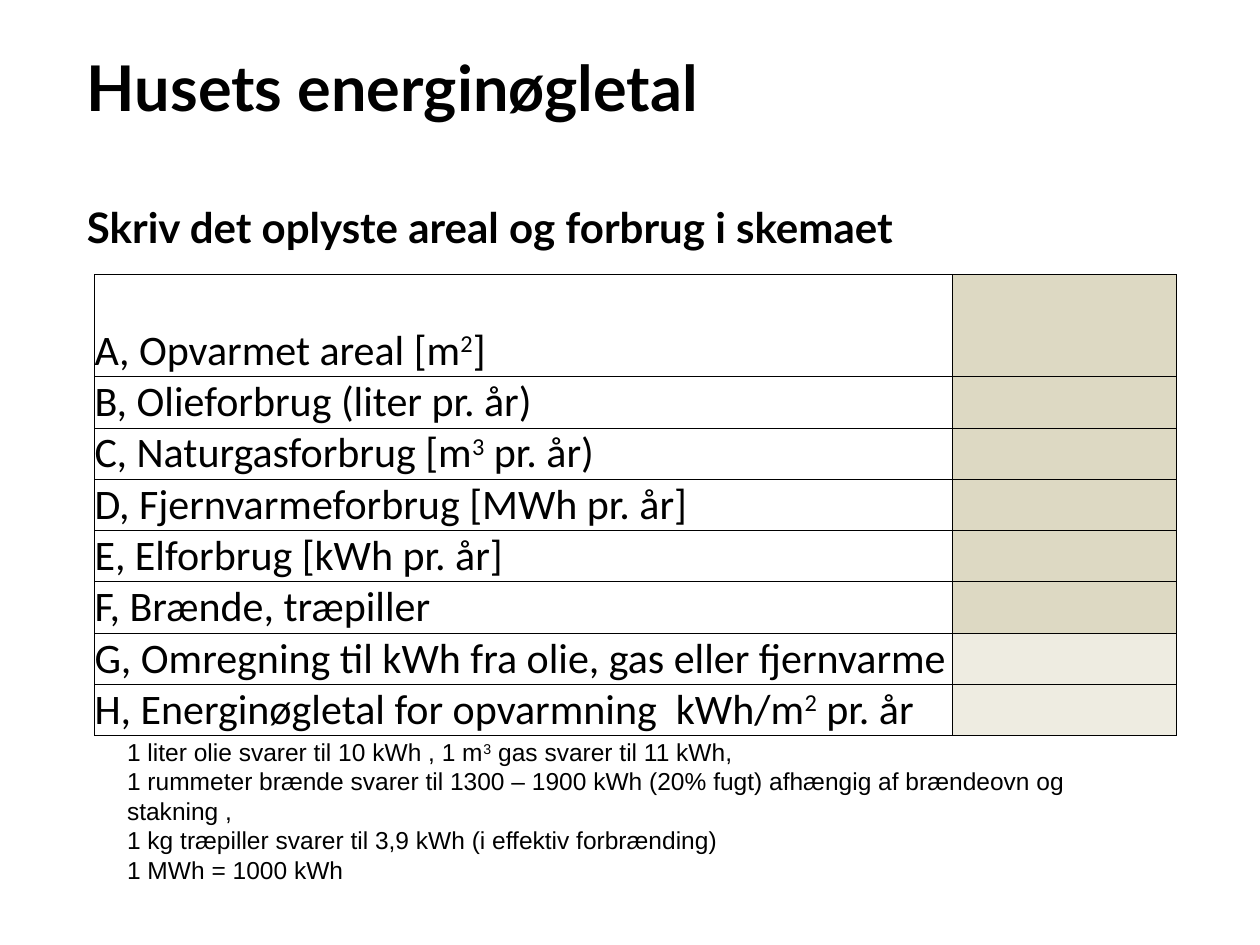
"""Build the slide with the table for a house's energy key figures."""
from dataclasses import dataclass

from lxml.etree import SubElement
from pptx import Presentation
from pptx.dml.color import RGBColor
from pptx.enum.text import MSO_ANCHOR, MSO_AUTO_SIZE, PP_ALIGN
from pptx.oxml.ns import qn
from pptx.slide import Slide
from pptx.table import _Cell
from pptx.text.text import _Paragraph
from pptx.util import Inches, Pt

BLACK = RGBColor(0x00, 0x00, 0x00)
WHITE = RGBColor(0xFF, 0xFF, 0xFF)
INPUT = RGBColor(0xDD, 0xD9, 0xC3)
RESULT = RGBColor(0xEE, 0xEC, 0xE1)


@dataclass(frozen=True)
class Entry:
    label: str
    color: RGBColor = INPUT
    height: float = 0.4


ENTRIES = (
    Entry("A, Opvarmet areal [m^2^]", height=0.81),
    Entry("B, Olieforbrug (liter pr. år)"),
    Entry("C, Naturgasforbrug [m^3^ pr. år)"),
    Entry("D, Fjernvarmeforbrug [MWh pr. år]"),
    Entry("E, Elforbrug [kWh pr. år]"),
    Entry("F, Brænde, træpiller"),
    Entry("G, Omregning til kWh fra olie, gas eller fjernvarme", RESULT),
    Entry("H, Energinøgletal for opvarmning  kWh/m^2^ pr. år", RESULT),
)
NOTES = (
    "1 liter olie svarer til 10 kWh , 1 m^3^ gas svarer til 11 kWh,",
    "1 rummeter brænde svarer til 1300 – 1900 kWh (20% fugt) afhængig af brændeovn og stakning ,",
    "1 kg træpiller svarer til 3,9 kWh (i effektiv forbrænding)",
    "1 MWh = 1000 kWh",
)


def write(p: _Paragraph, text: str, font: str, size: float, bold: bool = False) -> None:
    """Fill a paragraph, raising the parts between carets."""
    for i, part in enumerate(text.split("^")):
        r = p.add_run()
        r.text = part
        if i % 2:
            r.font._element.set("baseline", "30000")
    p.font.name, p.font.size, p.font.bold = font, Pt(size), bold
    p.font.color.rgb = BLACK


def style_cell(cell: _Cell, color: RGBColor) -> None:
    """Give a cell thin black borders, no margins and a fill."""
    tcPr = cell._tc.get_or_add_tcPr()
    for side in ("a:lnL", "a:lnR", "a:lnT", "a:lnB"):
        ln = SubElement(tcPr, qn(side), w=str(Pt(0.5)))
        SubElement(SubElement(ln, qn("a:solidFill")), qn("a:srgbClr"), val=str(BLACK))
    cell.margin_left = cell.margin_right = cell.margin_top = cell.margin_bottom = 0
    cell.vertical_anchor = MSO_ANCHOR.BOTTOM
    cell.fill.solid()
    cell.fill.fore_color.rgb = color


def add_title(slide: Slide) -> None:
    """Write the heading and the instruction in the title placeholder."""
    sp = slide.shapes.title
    sp.left, sp.top, sp.width, sp.height = (Inches(v) for v in (0.59, 0.6, 9, 1.18))
    tf = sp.text_frame
    tf.auto_size = MSO_AUTO_SIZE.NONE
    tf.vertical_anchor = MSO_ANCHOR.MIDDLE
    write(tf.paragraphs[0], "Husets energinøgletal", "Lato", 36, True)
    p = tf.add_paragraph()
    write(p, "Skriv det oplyste areal og forbrug i skemaet", "Lato", 24, True)
    p.space_before = Pt(44)
    for p in tf.paragraphs:
        p.alignment = PP_ALIGN.LEFT


def add_entries(slide: Slide) -> None:
    """Draw the table with one row per entry."""
    height = sum(e.height for e in ENTRIES)
    table = slide.shapes.add_table(len(ENTRIES), 2, Inches(0.75), Inches(2.18),
                                   Inches(8.59), Inches(height)).table
    table.first_row = table.horz_banding = False
    for col, width in zip(table.columns, (6.81, 1.78)):
        col.width = Inches(width)
    for row, entry in zip(table.rows, ENTRIES):
        row.height = Inches(entry.height)
        label, value = row.cells
        style_cell(label, WHITE)
        style_cell(value, entry.color)
        write(label.text_frame.paragraphs[0], entry.label, "Calibri", 24)


def add_notes(slide: Slide) -> None:
    """Write the conversion factors below the table."""
    tf = slide.shapes.add_textbox(Inches(0.91), Inches(5.8), Inches(8.28), Inches(1.35)).text_frame
    tf.word_wrap = True
    for i, note in enumerate(NOTES):
        write(tf.add_paragraph() if i else tf.paragraphs[0], note, "Arial", 14)


def main() -> None:
    """Assemble and save the slide."""
    prs = Presentation()
    prs.slide_width, prs.slide_height = Inches(10), Inches(7.5)
    slide = prs.slides.add_slide(prs.slide_layouts[5])
    add_title(slide)
    add_entries(slide)
    add_notes(slide)
    prs.save("out.pptx")


if __name__ == "__main__":
    main()
